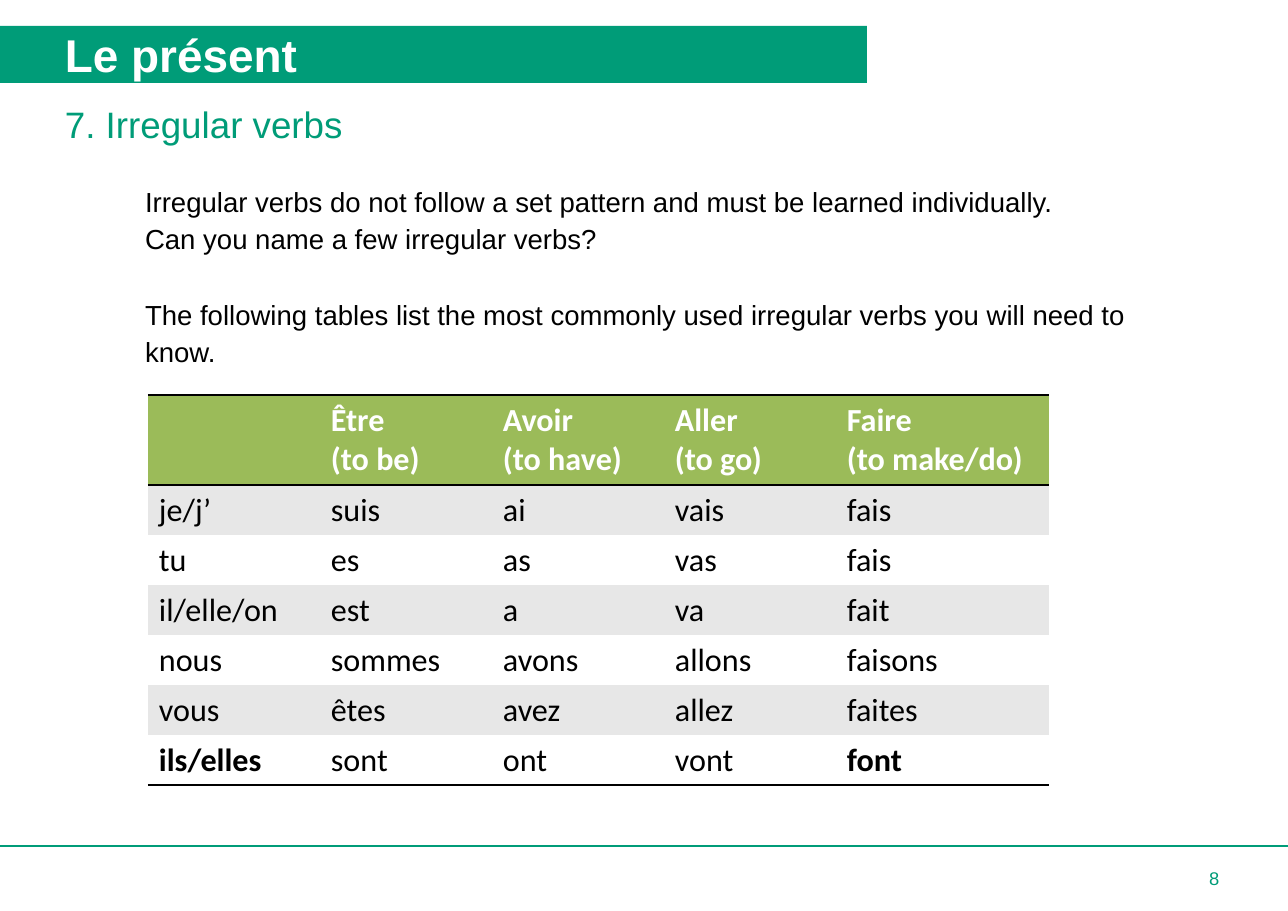
from lxml.etree import SubElement
from pptx import Presentation
from pptx.dml.color import RGBColor
from pptx.enum.shapes import MSO_CONNECTOR as LINK, MSO_SHAPE as SHAPE
from pptx.enum.text import MSO_ANCHOR as ANCHOR
from pptx.oxml import parse_xml
from pptx.oxml.ns import nsdecls, qn
from pptx.util import Pt

PX = 8298
GREEN = RGBColor(0x00, 0x9C, 0x78)
OLIVE = RGBColor(0x9B, 0xBB, 0x59)
GREY = RGBColor(0xE7, 0xE7, 0xE7)
WHITE = RGBColor(0xFF, 0xFF, 0xFF)
BLACK = RGBColor(0x00, 0x00, 0x00)
PLAIN = "{2D5ABB26-0587-4C30-8999-92F81FD0307C}"
INTRO = [
    "Irregular verbs do not follow a set pattern and must be learned individually.",
    "Can you name a few irregular verbs?",
    "The following tables list the most commonly used irregular verbs you will need to know.",
]
VERBS = [
    ["", "Être\n(to be)", "Avoir\n(to have)", "Aller\n(to go)", "Faire\n(to make/do)"],
    ["je/j’", "suis", "ai", "vais", "fais"],
    ["tu", "es", "as", "vas", "fais"],
    ["il/elle/on", "est", "a", "va", "fait"],
    ["nous", "sommes", "avons", "allons", "faisons"],
    ["vous", "êtes", "avez", "allez", "faites"],
    ["ils/elles", "sont", "ont", "vont", "font"],
]
STRONG = ("ils/elles", "font")


def scale(*nums):
    """Turn px into EMU."""
    return [num * PX for num in nums]


def style(frame, size, color, bold=False, name="Arial"):
    """Format each paragraph of a text frame."""
    for para in frame.paragraphs:
        font = para.font
        font.size, font.name, font.bold = Pt(size), name, bold
        font.color.rgb = color


def fit(frame, left, top, right, low, anchor):
    """Set the wrap, insets and anchor of a text frame."""
    frame.word_wrap = True
    frame.margin_left, frame.margin_top, frame.margin_right, frame.margin_bottom = scale(
        left, top, right, low)
    frame.vertical_anchor = anchor


def add_bar(slide, box):
    """Draw the title bar."""
    bar = slide.shapes.add_shape(SHAPE.RECTANGLE, *scale(*box))
    bar.shadow.inherit = False
    bar.fill.solid()
    bar.fill.fore_color.rgb = GREEN
    bar.line.fill.background()
    frame = bar.text_frame
    frame.text = "Le présent"
    fit(frame, 65, 0, 0, 0, ANCHOR.MIDDLE)
    frame.paragraphs[0].alignment = 1
    style(frame, 30, WHITE, True)


def add_head(slide, box):
    """Write the section heading."""
    frame = slide.shapes.add_textbox(*scale(*box)).text_frame
    frame.text = "7. Irregular verbs"
    fit(frame, 65, 0, 0, 5, ANCHOR.MIDDLE)
    style(frame, 24, GREEN)


def add_intro(slide, box):
    """Write the opening text."""
    frame = slide.shapes.add_textbox(*scale(*box)).text_frame
    frame.text = "\n".join(INTRO)
    fit(frame, 11, 6, 11, 6, ANCHOR.TOP)
    style(frame, 18, BLACK)
    for para in frame.paragraphs:
        para.line_spacing = Pt(24.6)
    frame.paragraphs[-1].space_before = Pt(24.6)


def add_rule(cell, side):
    """Put a black border on one side of a cell."""
    rule = parse_xml(f'<a:{side} {nsdecls("a")} w="{Pt(2)}"/>')
    fill = SubElement(rule, qn("a:solidFill"))
    SubElement(fill, qn("a:srgbClr"), val=str(BLACK))
    cell._tc.get_or_add_tcPr().insert(0, rule)


def fill_cell(cell, text, row):
    """Write and colour one cell."""
    head = row == 0
    cell.text = text
    cell.margin_left, cell.margin_right = scale(11, 11)
    style(cell.text_frame, 21, WHITE if head else BLACK, head or text in STRONG, "Calibri")
    cell.fill.solid()
    cell.fill.fore_color.rgb = OLIVE if head else GREY if row % 2 else WHITE
    if head or row == len(VERBS) - 1:
        add_rule(cell, "lnB")
    if head:
        add_rule(cell, "lnT")


def add_verbs(slide, box):
    """Draw the verb table, with a wider last column and a taller head row."""
    table = slide.shapes.add_table(len(VERBS), len(VERBS[0]), *scale(*box)).table
    table.first_row = table.horz_banding = False
    table._tbl.tblPr.find(qn("a:tableStyleId")).text = PLAIN
    for col, width in zip(table.columns, [172] * 4 + [box[2] - 4 * 172]):
        col.width = width * PX
    for row, words in enumerate(VERBS):
        table.rows[row].height = (50 if row else box[3] - 6 * 50) * PX
        for col, text in enumerate(words):
            fill_cell(table.cell(row, col), text, row)


def add_foot(slide, box):
    """Draw the bottom line and the page number."""
    left, top, width, height = box
    line = slide.shapes.add_connector(
        LINK.STRAIGHT, *scale(left, top, left + width, top))
    line.line.color.rgb = GREEN
    line.line.width = Pt(0.75)
    SubElement(line._element.spPr, qn("a:effectLst"))
    page = slide.shapes.add_textbox(*scale(left + width - 155, top, 155, height))
    frame = page.text_frame
    frame.text = "8"
    fit(frame, 76, 6, 11, 6, ANCHOR.MIDDLE)
    style(frame, 12, GREEN)


def main():
    """Build the slide and save it."""
    deck = Presentation()
    deck.slide_width, deck.slide_height = scale(1288, 911)
    slide = deck.slides.add_slide(deck.slide_layouts[6])
    add_foot(slide, (0, 846, 1288, 65))
    add_bar(slide, (0, 26, 867, 57))
    add_head(slide, (0, 98, 1288, 56))
    add_intro(slide, (134, 174, 1020, 200))
    add_verbs(slide, (148, 395, 901, 390))
    deck.save("out.pptx")


if __name__ == "__main__":
    main()
